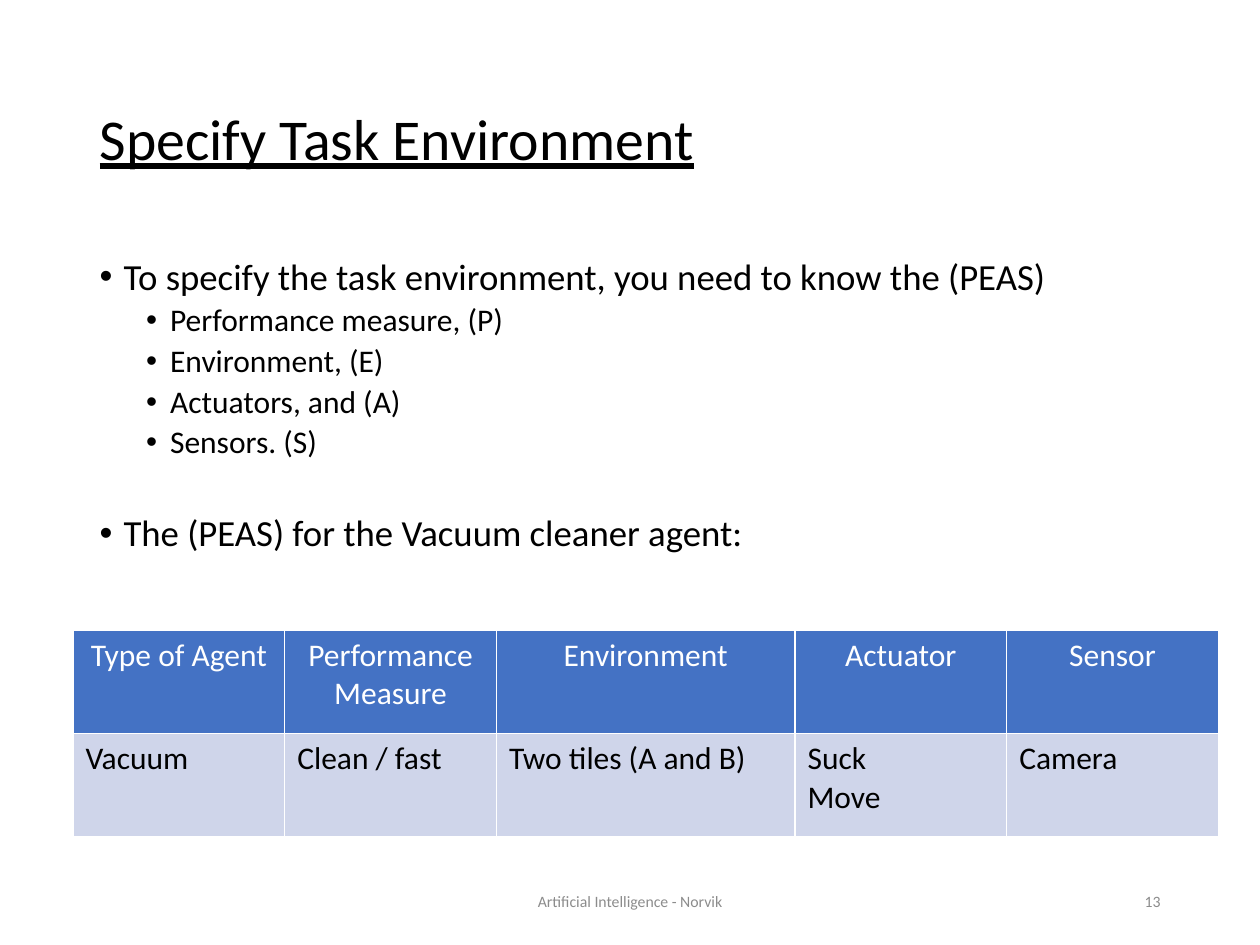
from lxml import etree
from pptx import Presentation
from pptx.dml.color import RGBColor
from pptx.enum import text as t
from pptx.oxml import ns
from pptx.util import Inches, Pt

COLORS = {"text": "000000", "muted": "8C8C8C", "header": "4472C4",
          "header_text": "FFFFFF", "row": "CFD5EA"}


def write(paragraph, wording, size=18, color="text", align=t.PP_ALIGN.LEFT,
          underline=None, spacing=None, before=None):
    paragraph.alignment = align
    if spacing is not None:
        paragraph.line_spacing = spacing
    if before is not None:
        paragraph.space_before = Pt(before)
    run = paragraph.add_run()
    run.text = wording
    run.font.name = "Calibri"
    run.font.size = Pt(size)
    run.font.bold = False
    run.font.underline = underline
    run.font.color.rgb = RGBColor.from_string(COLORS[color])


def place(shape, left, top, width, height):
    shape.left, shape.top = Inches(left), Inches(top)
    shape.width, shape.height = Inches(width), Inches(height)


prs = Presentation()
prs.slide_width, prs.slide_height = Inches(10), Inches(7.5)
slide = prs.slides.add_slide(prs.slide_layouts[1])

# Title
title = slide.shapes.title
place(title, 0.69, 0.4, 8.62, 1.45)
title.text_frame.auto_size = t.MSO_AUTO_SIZE.NONE
title.text_frame.vertical_anchor = t.MSO_ANCHOR.MIDDLE
write(title.text_frame.paragraphs[0], "Specify Task Environment", size=33,
      underline=True, spacing=0.9)

# Bullet list: level, wording, space before
points = [
    (0, "To specify the task environment, you need to know the (PEAS)", 7.5),
    (1, "Performance measure, (P)", 3.8),
    (1, "Environment, (E)", 3.8),
    (1, "Actuators, and (A)", 3.8),
    (1, "Sensors. (S)", 3.8),
    (0, "The (PEAS) for the Vacuum cleaner agent:", 31),
]
body = slide.placeholders[1]
place(body, 0.69, 2, 8.62, 4.76)
body.text_frame.auto_size = t.MSO_AUTO_SIZE.NONE
for i, (level, wording, before) in enumerate(points):
    point = body.text_frame.add_paragraph() if i else body.text_frame.paragraphs[0]
    point.level = level
    write(point, wording, size=(21, 18)[level], spacing=0.9, before=before)
    props = point._p.get_or_add_pPr()
    props.set("marL", str(Inches((0.19, 0.56)[level])))
    props.set("indent", str(Inches(-0.19)))
    etree.SubElement(props, ns.qn("a:buFont")).set("typeface", "Arial")
    etree.SubElement(props, ns.qn("a:buChar")).set("char", "•")

# Footer and slide number
footers = [
    ("Artificial Intelligence - Norvik", 3.31, 3.38, t.PP_ALIGN.CENTER),
    ("13", 7.06, 2.25, t.PP_ALIGN.RIGHT),
]
for wording, left, width, align in footers:
    footer = slide.shapes.add_textbox(Inches(left), Inches(6.95), Inches(width), Inches(0.4))
    footer.text_frame.word_wrap = True
    footer.text_frame.vertical_anchor = t.MSO_ANCHOR.MIDDLE
    write(footer.text_frame.paragraphs[0], wording, size=9, color="muted", align=align)

# PEAS table
peas_rows = [
    ["Type of Agent", "Performance Measure", "Environment", "Actuator", "Sensor"],
    ["Vacuum", "Clean / fast", "Two tiles (A and B)", "Suck\nMove", "Camera"],
]
peas = slide.shapes.add_table(2, 5, Inches(0.58), Inches(5), Inches(9.1), Inches(1.64)).table
for column, width in zip(peas.columns, (1.68, 1.68, 2.37, 1.68, 1.68)):
    column.width = Inches(width)
for r, row in enumerate(peas_rows):
    peas.rows[r].height = Inches(0.82)
    for c, wording in enumerate(row):
        cell = peas.cell(r, c)
        cell.fill.solid()
        cell.fill.fore_color.rgb = RGBColor.from_string(COLORS["row" if r else "header"])
        for i, line in enumerate(wording.split("\n")):
            paragraph = cell.text_frame.add_paragraph() if i else cell.text_frame.paragraphs[0]
            write(paragraph, line, color="text" if r else "header_text",
                  align=t.PP_ALIGN.LEFT if r else t.PP_ALIGN.CENTER)

prs.save("out.pptx")
